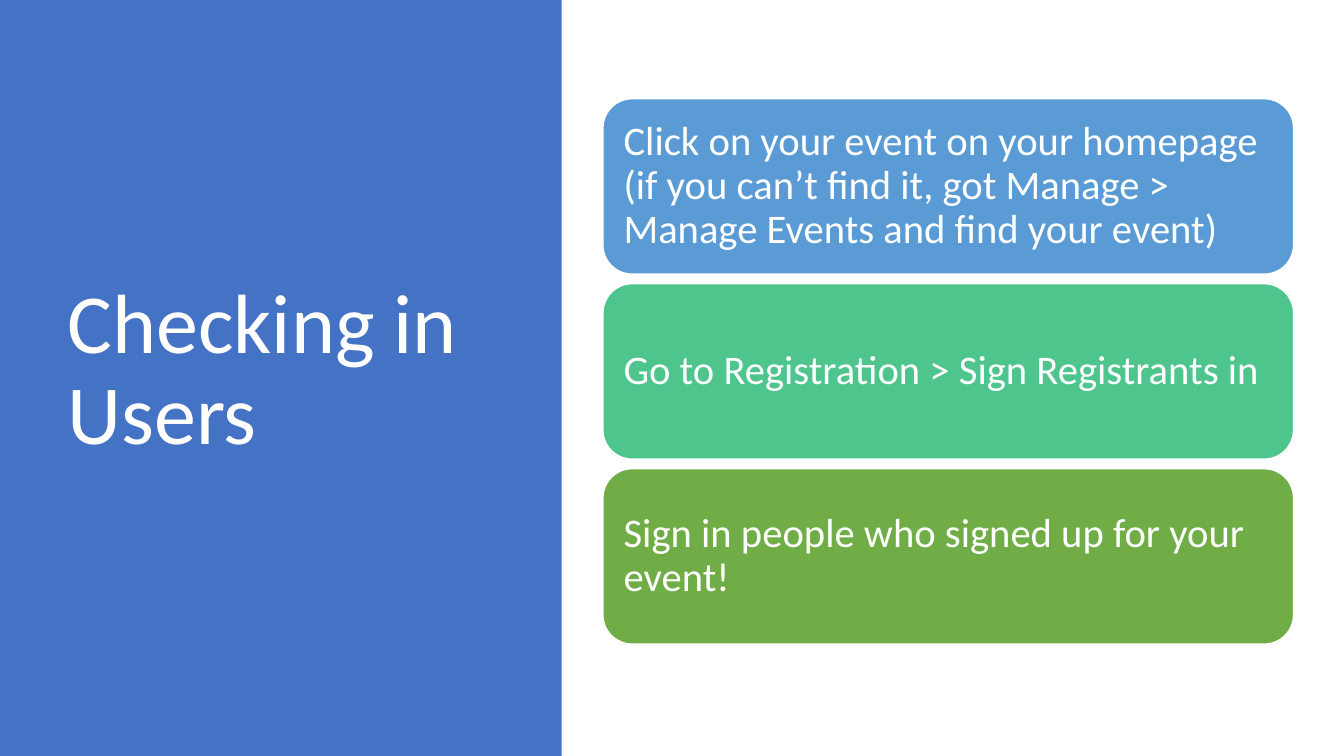
"""Build the "Checking in Users" slide."""
from dataclasses import dataclass

from pptx import Presentation
from pptx import util as u
from pptx.dml.color import RGBColor
from pptx.enum import shapes, text

EMU_PER_PX = 9144


@dataclass(frozen=True)
class Theme:
    """Colours, font and type sizes of the slide."""
    font: str = "Calibri"
    panel: str = "4472C4"
    white: str = "FFFFFF"
    steps: tuple = ("5B9BD5", "4DC58D", "70AD47")
    title_size: int = 60
    step_size: int = 29


THEME = Theme()
STEPS = (
    "Click on your event on your homepage (if you can’t find it, "
    "got Manage > Manage Events and find your event)",
    "Go to Registration > Sign Registrants in",
    "Sign in people who signed up for your event!",
)


def px(length):
    """Turn a length in px into EMU."""
    return u.Emu(round(length * EMU_PER_PX))


def write(shape, wording, size, color=THEME.white, inset=10):
    """Put left-aligned, vertically centred text into a shape."""
    frame = shape.text_frame
    frame.word_wrap = True
    frame.auto_size = text.MSO_AUTO_SIZE.NONE
    frame.vertical_anchor = text.MSO_ANCHOR.MIDDLE
    frame.margin_left = frame.margin_right = px(inset)
    frame.margin_top = frame.margin_bottom = px(inset)
    paragraph = frame.paragraphs[0]
    paragraph.alignment = text.PP_ALIGN.LEFT
    paragraph.line_spacing = 0.9
    run = paragraph.add_run()
    run.text = wording
    run.font.name = THEME.font
    run.font.size = u.Pt(size)
    run.font.color.rgb = RGBColor.from_string(color)


def add_block(slide, kind, box, fill, outline=None):
    """Add a filled preset shape, with an optional thin outline."""
    shape = slide.shapes.add_shape(kind, *map(px, box))
    shape.shadow.inherit = False
    shape.fill.solid()
    shape.fill.fore_color.rgb = RGBColor.from_string(fill)
    if outline:
        shape.line.color.rgb = RGBColor.from_string(outline)
        shape.line.width = u.Pt(1)
    else:
        shape.line.fill.background()
    return shape


def add_title_panel(slide, box):
    """Place the coloured panel behind the slide title."""
    left, top, width, height = box
    panel = add_block(slide, shapes.MSO_SHAPE.RECTANGLE, box, THEME.panel)
    title = slide.shapes.title
    title.element.addprevious(panel.element)
    title.left, title.top = px(left + 57), px(top + 68)
    title.width, title.height = px(width - 141), px(height - 148)
    write(title, "Checking in Users", THEME.title_size)


def add_steps(slide, box, step_height=174):
    """Spread the step cards evenly down the box."""
    left, top, width, height = box
    pitch = (height - step_height) / (len(STEPS) - 1)
    for index, (wording, fill) in enumerate(zip(STEPS, THEME.steps)):
        card_box = (left, top + index * pitch, width, step_height)
        card = add_block(slide, shapes.MSO_SHAPE.ROUNDED_RECTANGLE,
                         card_box, fill, outline=THEME.white)
        write(card, wording, THEME.step_size, inset=12)


def main():
    """Create the presentation and save it."""
    presentation = Presentation()
    presentation.slide_width = px(1333)
    presentation.slide_height = px(750)
    slide = presentation.slides.add_slide(presentation.slide_layouts[5])
    add_title_panel(slide, (0, 0, 557, 750))
    add_steps(slide, (598, 98, 685, 541))
    presentation.save("out.pptx")


if __name__ == "__main__":
    main()
